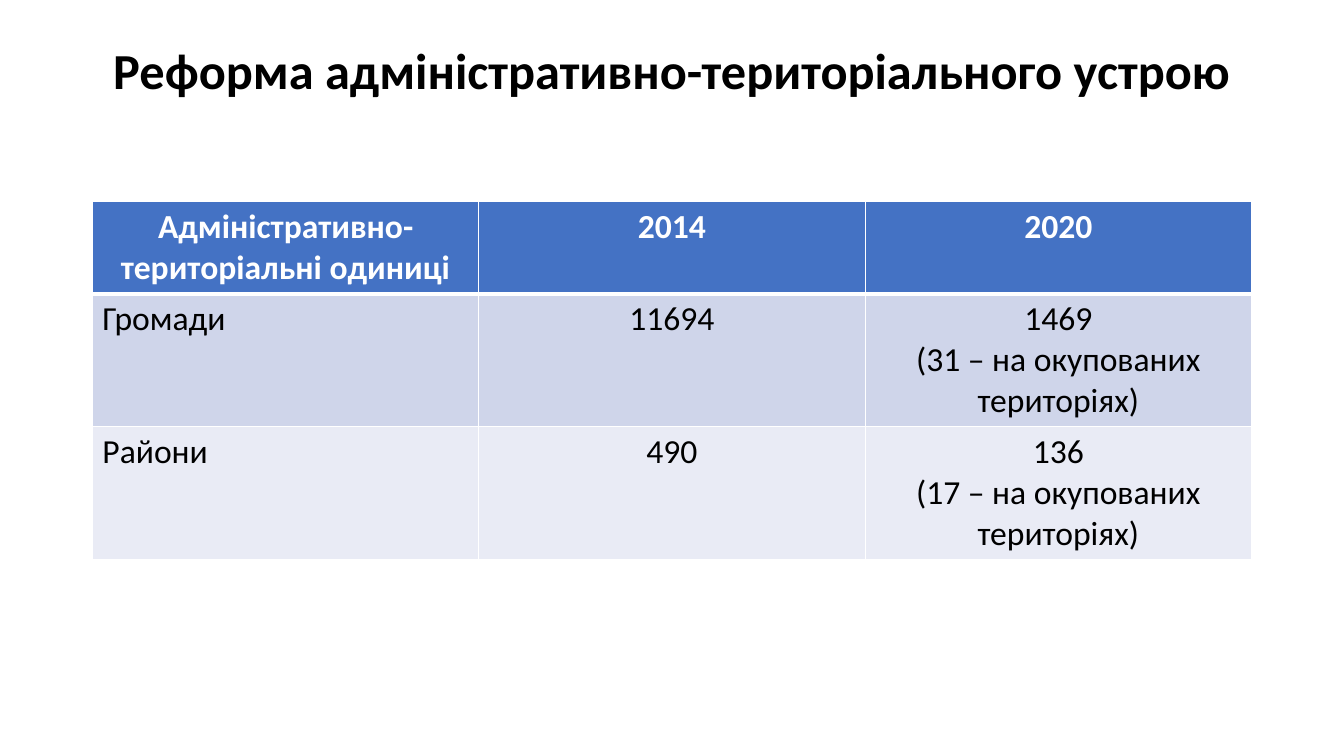
import pptx
import pptx.dml.color
import pptx.enum.text
import pptx.oxml
import pptx.oxml.ns
import pptx.util

PX = 9525
FONT = "Calibri"
BLACK, WHITE, BLUE = "000000", "FFFFFF", "4472C4"
BANDS = ["CFD5EA", "E9EBF5"]
LEFT, WIDTH = 88, 1104
ROW_HEIGHTS = [86, 125, 125]
UNITS = [
    ["Адміністративно-територіальні одиниці", "2014", "2020"],
    ["Громади", "11694", "1469\n(31 – на окупованих територіях)"],
    ["Райони", "490", "136\n(17 – на окупованих територіях)"],
]


def px(length):
    """Turn whole pixels into EMU."""
    return pptx.util.Emu(length * PX)


def color(hex_string):
    """Turn a hex string into a colour."""
    return pptx.dml.color.RGBColor.from_string(hex_string)


class SlideBuilder:
    """Hold the style and the current slide."""

    def __init__(self, presentation):
        """Add a title-only slide."""
        self.slide = presentation.slides.add_slide(presentation.slide_layouts[5])

    def style(self, paragraph, size, ink, bold, centered):
        """Format one paragraph."""
        align = pptx.enum.text.PP_ALIGN
        paragraph.alignment = align.CENTER if centered else align.LEFT
        paragraph.font.name = FONT
        paragraph.font.size = pptx.util.Pt(size)
        paragraph.font.bold = bold
        paragraph.font.color.rgb = color(ink)

    def title(self, text, left, top, width, height):
        """Place and format the title."""
        heading = self.slide.shapes.title
        heading.left, heading.top = px(left), px(top)
        heading.width, heading.height = px(width), px(height)
        frame = heading.text_frame
        frame.text = text
        frame.word_wrap = True
        frame.auto_size = pptx.enum.text.MSO_AUTO_SIZE.NONE
        frame.vertical_anchor = pptx.enum.text.MSO_ANCHOR.MIDDLE
        frame.paragraphs[0].line_spacing = 0.9
        self.style(frame.paragraphs[0], 36, BLACK, True, True)

    def border(self, cell, side, width):
        """Draw one white edge of a cell."""
        edge = pptx.oxml.parse_xml(
            f'<a:{side} {pptx.oxml.ns.nsdecls("a")} w="{pptx.util.Pt(width)}">'
            f'<a:solidFill><a:srgbClr val="{WHITE}"/></a:solidFill></a:{side}>'
        )
        cell._tc.get_or_add_tcPr().append(edge)

    def table(self, rows, left, top, width, heights):
        """Add a table with a header row and banded body rows."""
        columns = len(rows[0])
        grid = self.slide.shapes.add_table(
            len(rows), columns, px(left), px(top), px(width), px(sum(heights))
        ).table
        for column in grid.columns:
            column.width = px(width // columns)
        for r, (texts, height) in enumerate(zip(rows, heights)):
            grid.rows[r].height = px(height)
            header = r == 0
            for c, text in enumerate(texts):
                cell = grid.cell(r, c)
                for side in ("lnL", "lnR", "lnT", "lnB"):
                    thick = (header and side == "lnB") or (r == 1 and side == "lnT")
                    self.border(cell, side, 3 if thick else 1)
                cell.fill.solid()
                cell.fill.fore_color.rgb = color(BLUE if header else BANDS[(r - 1) % 2])
                cell.text = text
                for paragraph in cell.text_frame.paragraphs:
                    ink = WHITE if header else BLACK
                    self.style(paragraph, 24, ink, header, header or c > 0)


def main():
    """Build and save the slide."""
    presentation = pptx.Presentation()
    presentation.slide_width, presentation.slide_height = px(1280), px(720)
    reform = SlideBuilder(presentation)
    reform.title("Реформа адміністративно-територіального устрою", LEFT, 38, WIDTH, 63)
    reform.table(UNITS, LEFT, 192, WIDTH, ROW_HEIGHTS)
    presentation.save("out.pptx")


if __name__ == "__main__":
    main()
